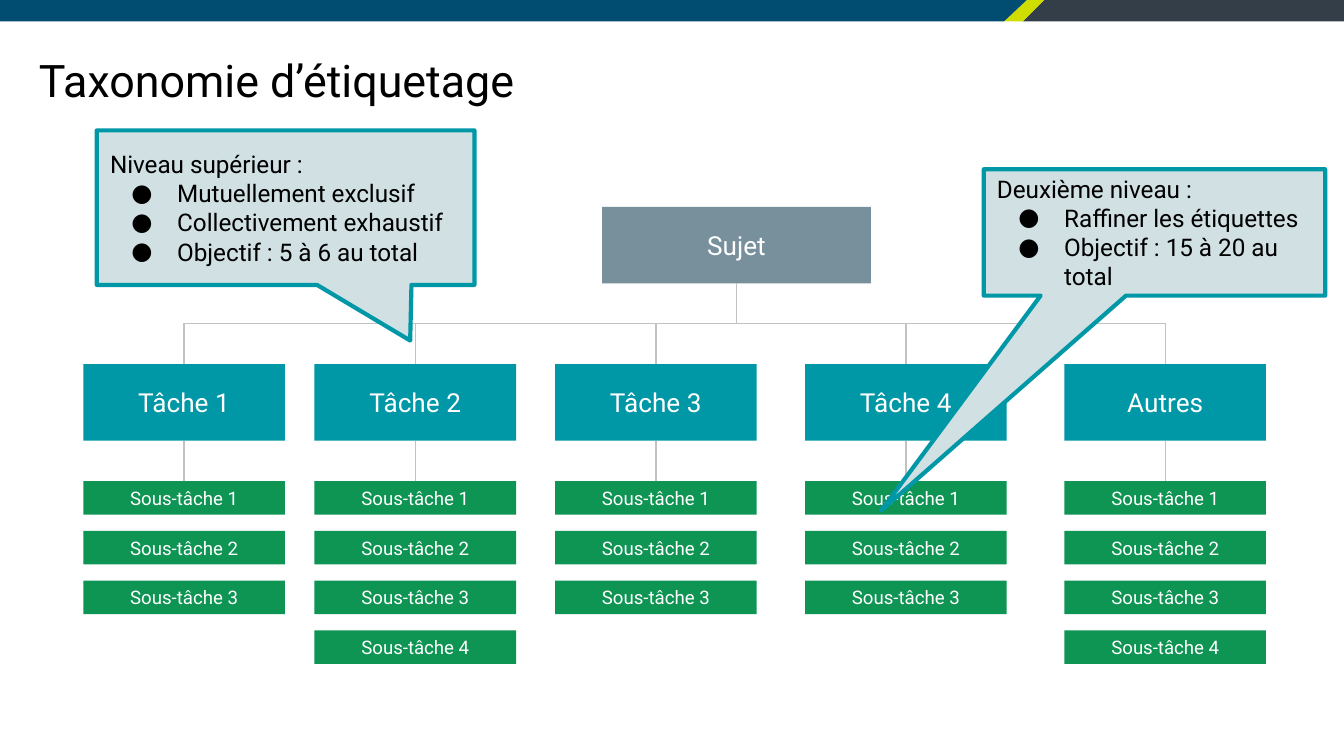
from dataclasses import dataclass

from lxml.etree import SubElement
from pptx import Presentation
from pptx.dml.color import RGBColor
from pptx.enum.shapes import MSO_CONNECTOR as Link, MSO_SHAPE as Preset
from pptx.enum.text import MSO_ANCHOR as Anchor, PP_ALIGN as Align
from pptx.oxml.ns import qn
from pptx.shapes.autoshape import Shape
from pptx.shapes.connector import Connector
from pptx.slide import Slide
from pptx.text.text import TextFrame, _Paragraph as Paragraph
from pptx.util import Inches, Pt

FONT = "Roboto"
BLACK, WHITE = "000000", "FFFFFF"
TEAL, GREEN, SLATE = "0097A7", "0E9453", "78909C"
PALE, LINK_GREY = "D0E0E3", "C2C2C2"

TASK_TOP, TASK_WIDTH, TASK_HEIGHT = 2.71, 1.5, 0.57
SUBTASK_TOP, SUBTASK_STEP, SUBTASK_HEIGHT = 3.58, 0.37, 0.25
CALLOUT_SIZE = 13


@dataclass
class Band:
    color: str
    points: list[tuple[float, float]]


@dataclass
class Task:
    name: str
    left: float
    subtasks: int


@dataclass
class Callout:
    box: tuple[float, float, float, float]
    tip: tuple[float, float]
    heading: str
    bullets: list[str]


BANDS = [
    Band("333E48", [(7.77, 0), (7.61, 0.16), (10, 0.16), (10, 0)]),
    Band("CFDE00", [(7.64, 0), (7.47, 0.16), (7.61, 0.16), (7.77, 0)]),
    Band("004D71", [(0, 0), (0, 0.16), (7.47, 0.16), (7.64, 0)]),
]
TASKS = [
    Task("Tâche 1", 0.62, 3),
    Task("Tâche 2", 2.34, 4),
    Task("Tâche 3", 4.13, 3),
    Task("Tâche 4", 5.99, 3),
    Task("Autres", 7.92, 4),
]
CALLOUTS = [
    Callout((0.72, 0.97, 2.81, 1.15), (0.33, 0.86), "Niveau supérieur :",
            ["Mutuellement exclusif", "Collectivement exhaustif",
             "Objectif : 5 à 6 au total"]),
    Callout((7.32, 1.26, 2.54, 0.94), (-0.8, 2.2), "Deuxième niveau :",
            ["Raffiner les étiquettes", "Objectif : 15 à 20 au total"]),
]


def rgb(color: str) -> RGBColor:
    return RGBColor.from_string(color)


def paint(shape: Shape, color: str) -> None:
    shape.shadow.inherit = False
    shape.fill.solid()
    shape.fill.fore_color.rgb = rgb(color)
    shape.line.fill.background()


def prepare_frame(frame: TextFrame) -> None:
    frame.word_wrap = True
    frame.vertical_anchor = Anchor.MIDDLE
    frame.margin_left = frame.margin_right = Inches(0.1)
    frame.margin_top = frame.margin_bottom = Inches(0.1)


def write(paragraph: Paragraph, text: str, size: float, color: str,
          align: Align = Align.LEFT) -> None:
    paragraph.alignment = align
    run = paragraph.add_run()
    run.text = text
    run.font.name = FONT
    run.font.size = Pt(size)
    run.font.color.rgb = rgb(color)


def add_bullet(paragraph: Paragraph) -> None:
    properties = paragraph._p.get_or_add_pPr()
    properties.set("marL", str(Inches(0.5)))
    properties.set("indent", str(Inches(-0.34)))
    bullet_color = SubElement(properties, qn("a:buClr"))
    SubElement(bullet_color, qn("a:srgbClr")).set("val", BLACK)
    SubElement(properties, qn("a:buSzPts")).set("val", str(CALLOUT_SIZE * 100))
    SubElement(properties, qn("a:buFont")).set("typeface", FONT)
    SubElement(properties, qn("a:buChar")).set("char", "●")


def draw_band(slide: Slide, band: Band) -> None:
    corners = [(Inches(x), Inches(y)) for x, y in band.points]
    builder = slide.shapes.build_freeform(*corners[0])
    builder.add_line_segments(corners[1:], close=True)
    paint(builder.convert_to_shape(), band.color)


def draw_box(slide: Slide, left: float, top: float, width: float,
             height: float, color: str, label: str, size: float) -> Shape:
    box = slide.shapes.add_shape(Preset.RECTANGLE, Inches(left), Inches(top),
                                 Inches(width), Inches(height))
    paint(box, color)
    prepare_frame(box.text_frame)
    write(box.text_frame.paragraphs[0], label, size, WHITE, Align.CENTER)
    return box


def link(slide: Slide, kind: Link, upper: Shape, lower: Shape) -> Connector:
    """Join the bottom of the upper box to the top of the lower one."""
    connector = slide.shapes.add_connector(kind, 0, 0, 0, 0)
    connector.begin_connect(upper, 2)
    connector.end_connect(lower, 0)
    connector.line.color.rgb = rgb(LINK_GREY)
    connector.line.width = Pt(0.75)
    SubElement(connector._element.spPr, qn("a:effectLst"))
    return connector


def branch(slide: Slide, parent: Shape, child: Shape) -> None:
    """Draw an elbow turned a quarter so that it leaves the parent downwards."""
    elbow = link(slide, Link.ELBOW, parent, child)
    start_x = parent.left + parent.width // 2
    end_x = child.left + child.width // 2
    start_y, end_y = parent.top + parent.height, child.top
    drop, spread = end_y - start_y, abs(end_x - start_x)
    elbow.left = (start_x + end_x - drop) // 2
    elbow.top = (start_y + end_y - spread) // 2
    elbow.width, elbow.height = drop, spread
    frame = elbow._element.spPr.xfrm
    to_right = end_x > start_x
    frame.rot = 270 if to_right else 90
    frame.flipH, frame.flipV = to_right, False


def draw_task(slide: Slide, task: Task, subject: Shape) -> None:
    head = draw_box(slide, task.left, TASK_TOP, TASK_WIDTH, TASK_HEIGHT,
                    TEAL, task.name, 14)
    branch(slide, subject, head)
    for row in range(task.subtasks):
        subtask = draw_box(slide, task.left, SUBTASK_TOP + row * SUBTASK_STEP,
                           TASK_WIDTH, SUBTASK_HEIGHT, GREEN,
                           f"Sous-tâche {row + 1}", 10)
        if row == 0:
            link(slide, Link.STRAIGHT, head, subtask)


def draw_callout(slide: Slide, callout: Callout) -> None:
    bubble = slide.shapes.add_shape(Preset.RECTANGULAR_CALLOUT,
                                    *map(Inches, callout.box))
    bubble.adjustments[0], bubble.adjustments[1] = callout.tip
    paint(bubble, PALE)
    bubble.line.color.rgb = rgb(TEAL)
    bubble.line.width = Pt(2.25)
    prepare_frame(bubble.text_frame)
    write(bubble.text_frame.paragraphs[0], callout.heading, CALLOUT_SIZE, BLACK)
    for text in callout.bullets:
        item = bubble.text_frame.add_paragraph()
        write(item, text, CALLOUT_SIZE, BLACK)
        add_bullet(item)


def main() -> None:
    deck = Presentation()
    deck.slide_width = Inches(10)
    deck.slide_height = deck.slide_width * 9 // 16
    slide = deck.slides.add_slide(deck.slide_layouts.get_by_name("Title Only"))

    title = slide.shapes.title
    title.left, title.top = Inches(0.19), Inches(0.28)
    title.width, title.height = Inches(9.32), Inches(0.63)
    prepare_frame(title.text_frame)
    write(title.text_frame.paragraphs[0], "Taxonomie d’étiquetage", 24, BLACK)

    for band in BANDS:
        draw_band(slide, band)
    subject = draw_box(slide, 4.48, 1.54, 2, 0.57, SLATE, "Sujet", 14)
    for task in TASKS:
        draw_task(slide, task, subject)
    for callout in CALLOUTS:
        draw_callout(slide, callout)
    deck.save("out.pptx")


if __name__ == "__main__":
    main()
